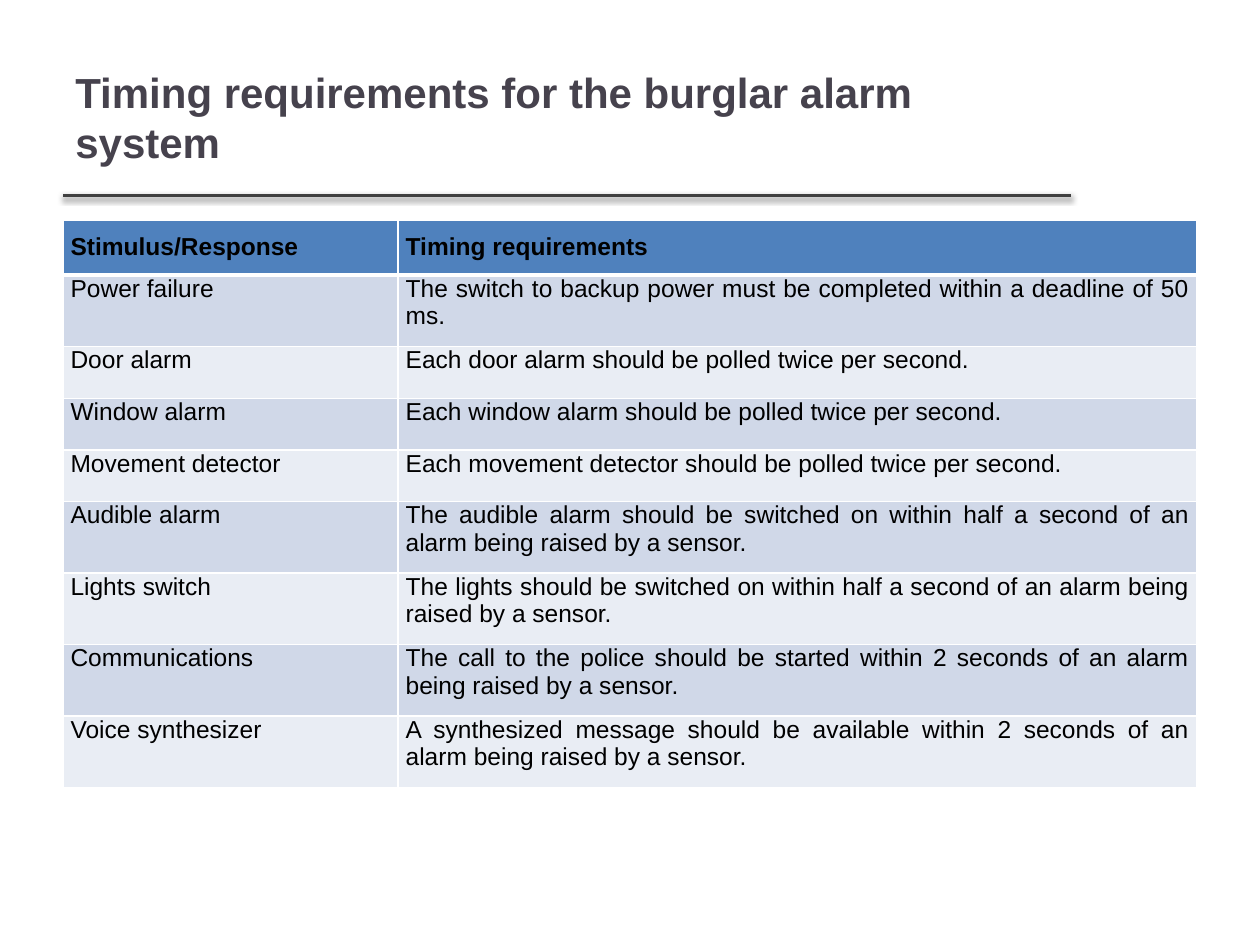
import pptx
import pptx.dml.color
import pptx.enum.shapes
import pptx.enum.text
import pptx.oxml
import pptx.oxml.ns
import pptx.util
from lxml import etree

RGBColor = pptx.dml.color.RGBColor
TITLE_GREY = RGBColor(0x46, 0x42, 0x4D)
RULE_GREY = RGBColor(0x40, 0x40, 0x40)
BLACK = RGBColor(0, 0, 0)
WHITE = RGBColor(0xFF, 0xFF, 0xFF)
HEADER_BLUE = RGBColor(0x4F, 0x81, 0xBD)
BANDS = [RGBColor(0xD0, 0xD8, 0xE8), RGBColor(0xE9, 0xED, 0xF4)]

REQUIREMENTS = [
    ("Stimulus/Response", "Timing requirements"),
    ("Power failure", "The switch to backup power must be completed within a deadline of 50 ms."),
    ("Door alarm", "Each door alarm should be polled twice per second."),
    ("Window alarm", "Each window alarm should be polled twice per second."),
    ("Movement detector", "Each movement detector should be polled twice per second."),
    ("Audible alarm", "The audible alarm should be switched on within half a second of an alarm being raised by a sensor."),
    ("Lights switch", "The lights should be switched on within half a second of an alarm being raised by a sensor."),
    ("Communications", "The call to the police should be started within 2 seconds of an alarm being raised by a sensor."),
    ("Voice synthesizer", "A synthesized message should be available within 2 seconds of an alarm being raised by a sensor."),
]


def add_run(paragraph, text, size, color, bold):
    run = paragraph.add_run()
    run.text = text
    run.font.name = "Arial"
    run.font.size = pptx.util.Pt(size)
    run.font.color.rgb = color
    run.font.bold = bold


def add_border(cell, side, width):
    """Draw one white edge of a cell; side is L, R, T or B."""
    edge = etree.SubElement(cell._tc.get_or_add_tcPr(), pptx.oxml.ns.qn(f"a:ln{side}"),
                            w=str(pptx.util.Pt(width)))
    fill = etree.SubElement(edge, pptx.oxml.ns.qn("a:solidFill"))
    etree.SubElement(fill, pptx.oxml.ns.qn("a:srgbClr"), val=str(WHITE))


presentation = pptx.Presentation()
presentation.slide_width = pptx.util.Inches(10)
presentation.slide_height = pptx.util.Inches(7.5)
slide = presentation.slides.add_slide(presentation.slide_layouts[6])

margin = int(presentation.slide_width * 0.05)
table_width = presentation.slide_width - 2 * margin
title_width = int(presentation.slide_width * 0.8)
title_top = int(presentation.slide_height * 0.04)
title_height = presentation.slide_height // 6
rule_top = title_top + title_height

# Title rule with a soft shadow
rule = slide.shapes.add_connector(pptx.enum.shapes.MSO_CONNECTOR.STRAIGHT,
                                  margin, rule_top, margin + title_width, rule_top)
rule.line.color.rgb = RULE_GREY
rule.line.width = pptx.util.Pt(2)
rule._element.spPr.append(pptx.oxml.parse_xml(
    f'<a:effectLst {pptx.oxml.ns.nsdecls("a")}>'
    f'<a:outerShdw blurRad="{pptx.util.Pt(3.1)}" dist="{pptx.util.Pt(1.6)}" dir="5400000">'
    '<a:srgbClr val="000000"><a:alpha val="38000"/></a:srgbClr>'
    '</a:outerShdw></a:effectLst>'))

title = slide.shapes.add_textbox(margin, title_top, title_width, title_height)
title.text_frame.word_wrap = True
title.text_frame.vertical_anchor = pptx.enum.text.MSO_ANCHOR.MIDDLE
add_run(title.text_frame.paragraphs[0], "Timing requirements for the burglar alarm system",
        24, TITLE_GREY, True)

# Requirements table
row_height = pptx.util.Inches(0.41)
table = slide.shapes.add_table(len(REQUIREMENTS), 2, margin, pptx.util.Inches(1.75),
                               table_width, row_height * len(REQUIREMENTS)).table
table.columns[0].width = pptx.util.Inches(2.66)
table.columns[1].width = table_width - table.columns[0].width

for row, texts in enumerate(REQUIREMENTS):
    table.rows[row].height = row_height
    is_header = row == 0
    for column, text in enumerate(texts):
        cell = table.cell(row, column)
        cell.margin_left = cell.margin_right = pptx.util.Inches(0.06)
        cell.margin_top = pptx.util.Inches(0.1 if is_header else 0)
        cell.margin_bottom = pptx.util.Inches(0.1)
        for side in "LRTB":
            thick = (is_header and side == "B") or (row == 1 and side == "T")
            add_border(cell, side, 3 if thick else 1)
        cell.fill.solid()
        cell.fill.fore_color.rgb = HEADER_BLUE if is_header else BANDS[(row - 1) % 2]
        paragraph = cell.text_frame.paragraphs[0]
        paragraph.alignment = pptx.enum.text.PP_ALIGN.JUSTIFY
        add_run(paragraph, text, 14, BLACK, is_header)

presentation.save("out.pptx")
